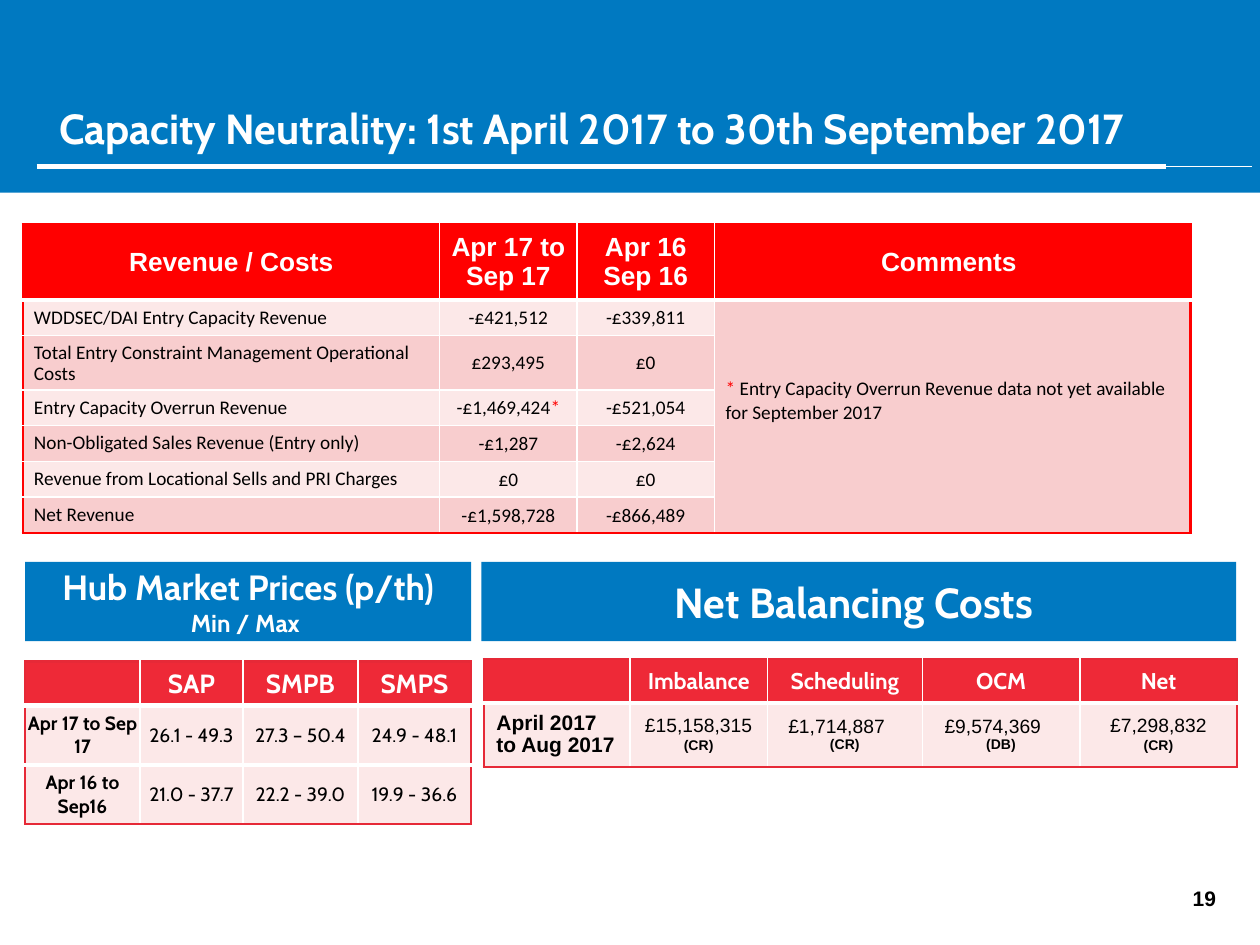
from lxml.etree import SubElement
from pptx import Presentation
from pptx.dml.color import RGBColor
from pptx.enum.shapes import MSO_CONNECTOR, MSO_SHAPE
from pptx.enum.text import MSO_ANCHOR as Anchor, PP_ALIGN as Align
from pptx.oxml import parse_xml
from pptx.oxml.ns import nsdecls, qn
from pptx.util import Inches, Pt

BLUE = RGBColor(0x00, 0x79, 0xC1)
WHITE = RGBColor(0xFF, 0xFF, 0xFF)
BLACK = RGBColor(0x00, 0x00, 0x00)
RED = RGBColor(0xFF, 0x00, 0x00)
CRIMSON = RGBColor(0xEE, 0x29, 0x37)
CRIMSON_EDGE = RGBColor(0xE6, 0x29, 0x37)
PALE = RGBColor(0xFC, 0xE8, 0xE8)
PINK = RGBColor(0xF8, 0xCD, 0xCE)

TITLE = "Capacity Neutrality: 1st April 2017 to 30th September 2017"
PAGE_NUMBER = "19"
STAR = ("*", dict(color=RED))

REVENUE_HEADER = ["Revenue / Costs", "Apr 17 to Sep 17", "Apr 16 Sep 16", "Comments "]
REVENUE_ROWS = [
    ("WDDSEC/DAI Entry Capacity Revenue", ["-£421,512"], "-£339,811"),
    ("Total Entry Constraint Management Operational Costs", ["£293,495"], "£0"),
    ("Entry Capacity Overrun Revenue", ["-£1,469,424", STAR], "-£521,054"),
    ("Non-Obligated Sales Revenue (Entry only)", ["-£1,287"], "-£2,624"),
    ("Revenue from Locational Sells and PRI Charges", ["£0"], "£0"),
    ("Net Revenue", ["-£1,598,728"], "-£866,489"),
]
COMMENT = [STAR, " Entry Capacity Overrun Revenue data not yet available for September 2017"]

PRICE_HEADER = ["", "SAP", "SMPB", "SMPS"]
PRICE_ROWS = [
    ("Apr 17 to Sep 17", "26.1 - 49.3", "27.3 – 50.4", "24.9 - 48.1"),
    ("Apr 16 to Sep16", "21.0 - 37.7", "22.2 - 39.0", "19.9 - 36.6"),
]

BALANCE_HEADER = ["", "Imbalance", "Scheduling", "OCM", "Net"]
BALANCE_PERIOD = "April 2017 to Aug 2017"
# amount, side, right indent of the amount, space between the two lines
BALANCES = [
    ("£15,158,315", "(CR)", 0, 2),
    ("£1,714,887", "(CR)", 0.13, 0),
    ("£9,574,369", "(DB)", 0.13, 0),
    ("£7,298,832", "(CR)", 0, 2),
]


def write(frame, *paragraphs, font="Cabin", size=11, color=BLACK, bold=False,
          align=Align.CENTER, line_spacing=None, space_before=0):
    """Each paragraph is a string or a list of strings and (string, overrides) runs."""
    frame.word_wrap = True
    for index, runs in enumerate(paragraphs):
        paragraph = frame.add_paragraph() if index else frame.paragraphs[0]
        paragraph.alignment = align
        if line_spacing:
            paragraph.line_spacing = line_spacing
        if index and space_before:
            paragraph.space_before = Pt(space_before)
        for item in [runs] if isinstance(runs, str) else runs:
            text, own = (item, {}) if isinstance(item, str) else item
            run = paragraph.add_run()
            run.text = text
            run.font.name = font
            run.font.size = Pt(own.get("size", size))
            run.font.bold = own.get("bold", bold)
            run.font.color.rgb = own.get("color", color)


def add_text(slide, box, *paragraphs, anchor=Anchor.TOP, **style):
    frame = slide.shapes.add_textbox(*map(Inches, box)).text_frame
    frame.vertical_anchor = anchor
    write(frame, *paragraphs, **style)


def add_banner(slide, box, *paragraphs, **style):
    shape = slide.shapes.add_shape(MSO_SHAPE.RECTANGLE, *map(Inches, box))
    shape.shadow.inherit = False
    shape.fill.solid()
    shape.fill.fore_color.rgb = BLUE
    shape.line.fill.background()
    shape.text_frame.vertical_anchor = Anchor.MIDDLE
    if paragraphs:
        write(shape.text_frame, *paragraphs, color=WHITE, bold=True, **style)


def add_rule(slide, left, right, top, width):
    line = slide.shapes.add_connector(
        MSO_CONNECTOR.STRAIGHT, *map(Inches, (left, top, right, top)))
    line.line.color.rgb = WHITE
    line.line.width = Pt(width)
    SubElement(line._element.spPr, qn("a:effectLst"))


def set_borders(cell, sides):
    """Borders go before the fill, in the order left, right, top, bottom."""
    properties = cell._tc.get_or_add_tcPr()
    for index, (name, (color, width)) in enumerate(zip("LRTB", sides)):
        old = properties.find(qn(f"a:ln{name}"))
        if old is not None:
            properties.remove(old)
        properties.insert(index, parse_xml(
            f'<a:ln{name} {nsdecls("a")} w="{Pt(width)}"><a:solidFill>'
            f'<a:srgbClr val="{color}"/></a:solidFill></a:ln{name}>'))


def set_margins(cell, side, vertical):
    cell.margin_left = cell.margin_right = Inches(side)
    cell.margin_top = cell.margin_bottom = Inches(vertical)


def add_grid(slide, left, top, columns, rows, header_fill, body_fills, edge_color,
             heavy_rows, side_margin=0.1):
    """Styled empty table; heavy_rows are the rows with a thick white line below."""
    table = slide.shapes.add_table(
        len(rows), len(columns),
        *map(Inches, (left, top, sum(columns), sum(rows)))).table
    table.horz_banding = False
    for column, width in zip(table.columns, columns):
        column.width = Inches(width)
    for row, height in zip(table.rows, rows):
        row.height = Inches(height)
    edge, thin, heavy = (edge_color, 1.5), (WHITE, 1), (WHITE, 3)
    last_row, last_column = len(rows) - 1, len(columns) - 1
    for r in range(len(rows)):
        for c in range(len(columns)):
            cell = table.cell(r, c)
            cell.vertical_anchor = Anchor.MIDDLE
            set_margins(cell, side_margin, 0.05)
            cell.fill.solid()
            cell.fill.fore_color.rgb = body_fills[(r - 1) % len(body_fills)] if r else header_fill
            set_borders(cell, (
                edge if c == 0 else thin,
                edge if c == last_column else thin,
                edge if r == 0 else heavy if r - 1 in heavy_rows else thin,
                edge if r == last_row else heavy if r in heavy_rows else thin))
    return table


def write_header(table, labels, **style):
    for column, label in enumerate(labels):
        cell = table.cell(0, column)
        if label:
            write(cell.text_frame, label, color=WHITE, bold=True, **style)
        else:
            set_margins(cell, 0, 0)


def add_revenue_table(slide):
    table = add_grid(slide, 0.18, 1.78, [3.31, 1.09, 1.09, 3.78],
                     [0.59, 0.28, 0.43] + [0.28] * 4, RED, [PALE, PINK], RED, {0},
                     side_margin=0.09)
    write_header(table, REVENUE_HEADER, font="Arial", size=15)
    for r, (label, current, previous) in enumerate(REVENUE_ROWS, 1):
        write(table.cell(r, 0).text_frame, label, font="Calibri",
              align=Align.LEFT, line_spacing=0.9)
        write(table.cell(r, 1).text_frame, current, font="Calibri")
        write(table.cell(r, 2).text_frame, previous, font="Calibri")
    comment = table.cell(1, 3)
    comment.merge(table.cell(len(REVENUE_ROWS), 3))
    comment.fill.fore_color.rgb = PINK
    comment.vertical_anchor = Anchor.TOP
    comment.margin_top = Inches(0.61)
    set_borders(comment, ((WHITE, 1), (RED, 1.5), (WHITE, 3), (RED, 1.5)))
    write(comment.text_frame, COMMENT, font="Calibri", align=Align.LEFT)


def add_price_table(slide):
    table = add_grid(slide, 0.2, 5.25, [0.91, 0.82, 0.91, 0.9], [0.35, 0.47, 0.47],
                     CRIMSON, [PALE], CRIMSON_EDGE, {0, 1})
    write_header(table, PRICE_HEADER, size=15)
    for r, values in enumerate(PRICE_ROWS, 1):
        for c, value in enumerate(values):
            cell = table.cell(r, c)
            set_margins(cell, 0, 0)
            write(cell.text_frame, value, bold=c == 0)


def add_balance_table(slide):
    table = add_grid(slide, 3.84, 5.23, [1.16, 1.09, 1.23, 1.25, 1.25], [0.35, 0.51],
                     CRIMSON, [PALE], CRIMSON_EDGE, {0})
    write_header(table, BALANCE_HEADER, size=13)
    write(table.cell(1, 0).text_frame, BALANCE_PERIOD, font="Arial", size=12,
          bold=True, align=Align.LEFT, line_spacing=0.9)
    for c, (amount, side, indent, gap) in enumerate(BALANCES, 1):
        frame = table.cell(1, c).text_frame
        write(frame, amount, [(side, dict(size=8, bold=True))],
              font="Arial", line_spacing=0.9, space_before=gap)
        for paragraph, right in zip(frame.paragraphs, (indent, 0)):
            paragraph._p.get_or_add_pPr().set("marR", str(Inches(right)))


def main():
    presentation = Presentation()
    presentation.slide_width, presentation.slide_height = Inches(10), Inches(7.5)
    slide = presentation.slides.add_slide(presentation.slide_layouts[6])
    add_banner(slide, (0, 0, 10, 1.53))
    add_rule(slide, 0.3, 9.94, 1.32, 0.75)
    add_rule(slide, 0.29, 9.25, 1.32, 3)
    add_text(slide, (0.37, 0.76, 9.12, 0.5), TITLE, anchor=Anchor.BOTTOM,
             size=24, color=WHITE, bold=True, align=Align.LEFT)
    add_text(slide, (7.42, 6.98, 2.33, 0.4), PAGE_NUMBER,
             font="Arial", size=12, bold=True, align=Align.RIGHT)
    add_banner(slide, (0.2, 4.46, 3.54, 0.63), "Hub Market Prices (p/th)",
               [("Min / Max ", dict(size=14))], size=20)
    add_banner(slide, (3.82, 4.46, 5.99, 0.63), "Net Balancing Costs ", size=24)
    add_price_table(slide)
    add_balance_table(slide)
    add_revenue_table(slide)
    presentation.save("out.pptx")


if __name__ == "__main__":
    main()
